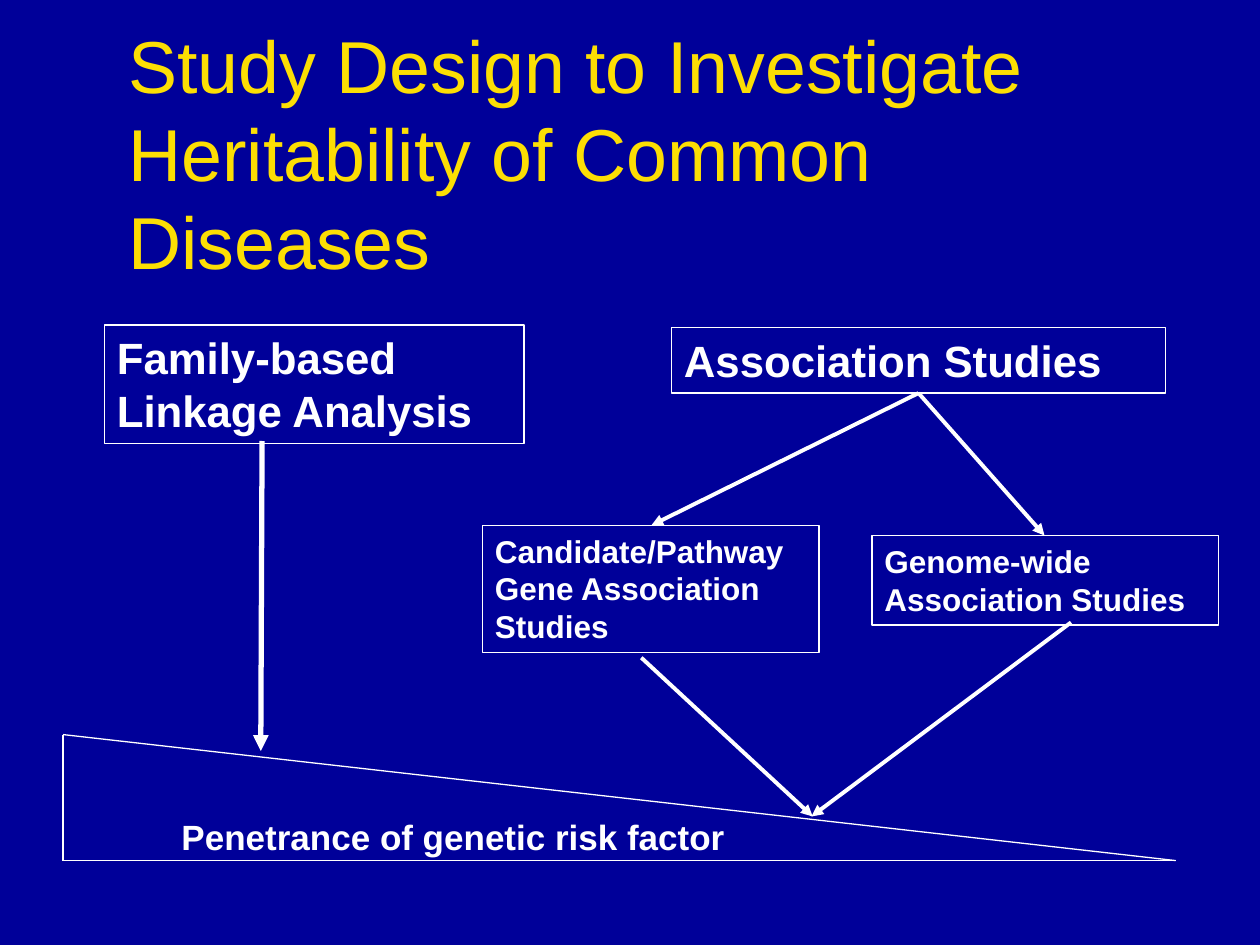
"""Build the slide on study designs for the heritability of common diseases."""
from dataclasses import dataclass

import lxml.etree
import pptx
import pptx.dml.color
import pptx.enum.shapes
import pptx.enum.text
import pptx.oxml.ns
import pptx.slide
import pptx.util

Inches = pptx.util.Inches
Point = tuple[float, float]
COLORS = {"background": "000099", "title": "FCDE04", "foreground": "FFFFFF"}


@dataclass
class Label:
    text: str
    left: float
    top: float
    width: float
    height: float
    size: float
    color: str = "foreground"
    bold: bool = True
    outlined: bool = False
    inset: float = 0.1
    anchor: pptx.enum.text.MSO_ANCHOR = pptx.enum.text.MSO_ANCHOR.TOP


@dataclass
class Line:
    start: Point
    end: Point
    weight: float = 2.25
    arrow: bool = True


def rgb(name: str) -> pptx.dml.color.RGBColor:
    """Return the named colour."""
    return pptx.dml.color.RGBColor.from_string(COLORS[name])


def draw_label(slide: pptx.slide.Slide, label: Label) -> None:
    """Draw a text label, with a thin frame when outlined."""
    bounds = [Inches(v) for v in (label.left, label.top, label.width, label.height)]
    if label.outlined:
        box = slide.shapes.add_shape(pptx.enum.shapes.MSO_SHAPE.RECTANGLE, *bounds)
        box.shadow.inherit = False
        box.fill.background()
        box.line.color.rgb = rgb("foreground")
        box.line.width = pptx.util.Pt(0.75)
    else:
        box = slide.shapes.add_textbox(*bounds)
    frame_format = {
        "word_wrap": True,
        "vertical_anchor": label.anchor,
        "margin_left": Inches(label.inset),
    }
    for attribute, value in frame_format.items():
        setattr(box.text_frame, attribute, value)
    paragraph = box.text_frame.paragraphs[0]
    paragraph.alignment = pptx.enum.text.PP_ALIGN.LEFT
    run = paragraph.add_run()
    run.text = label.text
    font_format = {
        "name": "Arial",
        "size": pptx.util.Pt(label.size),
        "bold": label.bold,
    }
    for attribute, value in font_format.items():
        setattr(run.font, attribute, value)
    run.font.color.rgb = rgb(label.color)


def draw_line(slide: pptx.slide.Slide, line: Line) -> None:
    """Draw a straight line, with an arrowhead at its end if asked."""
    connector = slide.shapes.add_connector(
        pptx.enum.shapes.MSO_CONNECTOR.STRAIGHT,
        *(Inches(v) for v in line.start + line.end),
    )
    connector.line.color.rgb = rgb("foreground")
    connector.line.width = pptx.util.Pt(line.weight)
    if line.arrow:
        head = lxml.etree.SubElement(
            connector.line._get_or_add_ln(), pptx.oxml.ns.qn("a:tailEnd")
        )
        head.set("type", "triangle")
    lxml.etree.SubElement(
        connector._element.spPr, pptx.oxml.ns.qn("a:effectLst")
    )


def main() -> None:
    """Compose and save the slide."""
    labels = [
        Label("Study Design to Investigate Heritability of Common Diseases",
              0.92, 0.79, 8.33, 0.83, 42, color="title", bold=False,
              anchor=pptx.enum.text.MSO_ANCHOR.MIDDLE),
        Label("Family-based Linkage Analysis",
              0.83, 2.58, 3.33, 0.94, 25, outlined=True),
        Label("Association Studies",
              5.33, 2.6, 3.92, 0.52, 25, outlined=True),
        Label("Penetrance of genetic risk factor",
              0.42, 6.42, 9.25, 0.44, 20, inset=1.02),
        Label("Candidate/Pathway Gene Association Studies",
              3.83, 4.17, 2.67, 1.01, 18, outlined=True),
        Label("Genome-wide Association Studies",
              6.92, 4.25, 2.75, 0.71, 18, outlined=True),
    ]
    wedge_tip, wedge_base, wedge_top = (9.33, 6.83), (0.5, 6.83), (0.5, 5.83)
    wedge_sides = [
        (wedge_tip, wedge_base), (wedge_tip, wedge_top), (wedge_base, wedge_top)
    ]
    association_exit = (7.29, 3.12)
    lines = [Line(*side, weight=0.75, arrow=False) for side in wedge_sides]
    lines += [
        Line((2.08, 3.5), (2.07, 5.96), weight=3),
        Line(association_exit, (5.17, 4.17)),
        Line(association_exit, (8.29, 4.25)),
        Line((5.09, 5.22), (6.45, 6.48)),
        Line((8.5, 4.94), (6.44, 6.48)),
    ]

    presentation = pptx.Presentation()
    presentation.slide_width = Inches(10)
    presentation.slide_height = Inches(7.5)
    slide = presentation.slides.add_slide(presentation.slide_layouts[6])
    slide.background.fill.solid()
    slide.background.fill.fore_color.rgb = rgb("background")
    for label in labels:
        draw_label(slide, label)
    for line in lines:
        draw_line(slide, line)
    presentation.save("out.pptx")


if __name__ == "__main__":
    main()
